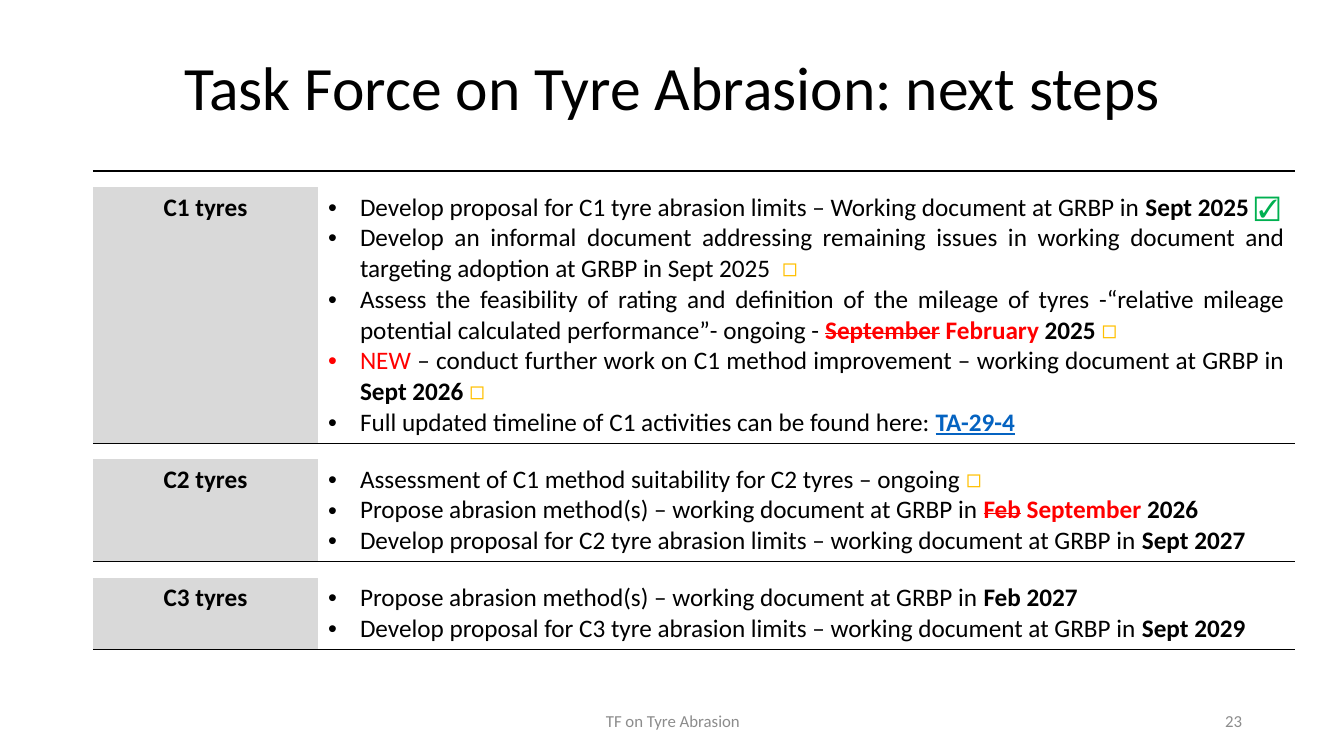
from dataclasses import dataclass
from lxml import etree
from pptx import Presentation
from pptx.dml.color import RGBColor
from pptx.enum.text import MSO_ANCHOR, PP_ALIGN
from pptx.oxml.ns import qn
from pptx.util import Pt

PX = 914400 / 100.8  # EMU in one px
NO_TABLE_STYLE = "{2D5ABB26-0587-4C30-8999-92F81FD0307C}"


@dataclass(frozen=True)
class Theme:
    font: str = "Calibri"
    title_size: int = 44
    body_size: int = 18
    footer_size: int = 12
    spacer_size: int = 3
    rule_width: int = 1
    black: str = "000000"
    footer_grey: str = "8C8C8C"
    label_fill: str = "D9D9D9"
    green: str = "00B050"
    amber: str = "FFC000"
    red: str = "FF0000"
    link_blue: str = "0563C1"

    def run_style(self, role):
        """Colour and bold for a role of text."""
        return {
            "plain": (self.black, False),
            "bold": (self.black, True),
            "done": (self.green, False),
            "open": (self.amber, False),
            "new": (self.red, False),
            "moved": (self.red, True),
            "struck": (self.red, True),
            "link": (self.link_blue, True),
            "footer": (self.footer_grey, False),
        }[role]


def emu(px):
    return round(px * PX)


class SlideBuilder:
    def __init__(self, slide, theme):
        self.slide = slide
        self.theme = theme

    def run(self, paragraph, text, role, size):
        run = paragraph.add_run()
        run.text = text
        color, bold = self.theme.run_style(role)
        font = run.font
        font.name, font.size, font.bold = self.theme.font, Pt(size), bold
        font.color.rgb = RGBColor.from_string(color)
        if role == "link":
            font.underline = True
        if role == "struck":
            run._r.get_or_add_rPr().set("strike", "sngStrike")

    def text(self, box, text, role, size, align, line_spacing=None):
        frame = self.slide.shapes.add_textbox(*map(emu, box)).text_frame
        frame.word_wrap = True
        frame.vertical_anchor = MSO_ANCHOR.MIDDLE
        paragraph = frame.paragraphs[0]
        paragraph.alignment = align
        paragraph.line_spacing = line_spacing
        self.run(paragraph, text, role, size)

    def rule(self, cell, side):
        """Draw a border on one side of a cell: T or B."""
        line = etree.Element(qn(f"a:ln{side}"), w=str(Pt(self.theme.rule_width)))
        fill = etree.SubElement(line, qn("a:solidFill"))
        etree.SubElement(fill, qn("a:srgbClr"), val=self.theme.black)
        cell._tc.get_or_add_tcPr().insert(0, line)

    def bullets(self, cell, items):
        frame = cell.text_frame
        for index, (align, runs) in enumerate(items):
            paragraph = frame.add_paragraph() if index else frame.paragraphs[0]
            paragraph.alignment = align
            props = paragraph._p.get_or_add_pPr()
            indent = emu(32)
            props.set("marL", str(indent))
            props.set("indent", str(-indent))
            etree.SubElement(props, qn("a:buFont"), typeface="Arial")
            etree.SubElement(props, qn("a:buChar"), char="•")
            for text, role in runs:
                self.run(paragraph, text, role, self.theme.body_size)

    def spacer(self, cell):
        """Keep an empty row thin."""
        paragraph = cell.text_frame.paragraphs[0]._p
        etree.SubElement(paragraph, qn("a:endParaRPr"), sz=str(self.theme.spacer_size * 100))

    def steps_table(self, left, top, widths, gap, groups):
        heights = [h for _, height, _ in groups for h in (gap, height)]
        table = self.slide.shapes.add_table(
            len(heights), len(widths), *map(emu, (left, top, sum(widths), sum(heights)))
        ).table
        table.first_row = table.horz_banding = False
        table._tbl.tblPr.find(qn("a:tableStyleId")).text = NO_TABLE_STYLE
        for column, width in zip(table.columns, widths):
            column.width = emu(width)
        for row, height in zip(table.rows, heights):
            row.height = emu(height)
        for cell in table.iter_cells():
            cell.fill.background()

        for index, (label, _, items) in enumerate(groups):
            for column in range(len(widths)):
                spacer_cell = table.cell(2 * index, column)
                self.spacer(spacer_cell)
                if index == 0:
                    self.rule(spacer_cell, "T")
                self.rule(table.cell(2 * index + 1, column), "B")
            label_cell = table.cell(2 * index + 1, 0)
            label_cell.fill.solid()
            label_cell.fill.fore_color.rgb = RGBColor.from_string(self.theme.label_fill)
            heading = label_cell.text_frame.paragraphs[0]
            heading.alignment = PP_ALIGN.CENTER
            self.run(heading, label, "bold", self.theme.body_size)
            self.bullets(table.cell(2 * index + 1, 1), items)


LEFT, JUSTIFY = PP_ALIGN.LEFT, PP_ALIGN.JUSTIFY
OPEN = ("◻", "open")

C1_STEPS = [
    (LEFT, [
        ("Develop proposal for C1 tyre abrasion limits – Working document at GRBP in ", "plain"),
        ("Sept 2025 ", "bold"), ("☑", "done")]),
    (JUSTIFY, [
        ("Develop an informal document addressing remaining issues in working document "
         "and targeting adoption at GRBP in Sept 2025  ", "plain"), OPEN]),
    (JUSTIFY, [
        ("Assess the feasibility of rating and definition of the mileage of tyres "
         "-“relative mileage potential calculated performance”- ongoing - ", "plain"),
        ("September", "struck"), (" ", "bold"), ("February", "moved"),
        (" 2025 ", "bold"), OPEN]),
    (JUSTIFY, [
        ("NEW", "new"),
        (" – conduct further work on C1 method improvement – working document at GRBP in ",
         "plain"),
        ("Sept 2026 ", "bold"), OPEN]),
    (JUSTIFY, [
        ("Full updated timeline of C1 activities can be found here: ", "plain"),
        ("TA-29-4", "link")]),
]
PROPOSE_METHOD = ("Propose abrasion method(s) – working document at GRBP in ", "plain")


def propose_limits(tyre_class, date):
    return (LEFT, [
        (f"Develop proposal for {tyre_class} tyre abrasion limits – "
         "working document at GRBP in ", "plain"),
        (date, "bold")])


C2_STEPS = [
    (LEFT, [("Assessment of C1 method suitability for C2 tyres – ongoing ", "plain"), OPEN]),
    (LEFT, [PROPOSE_METHOD, ("Feb", "struck"), (" ", "bold"), ("September", "moved"),
            (" 2026", "bold")]),
    propose_limits("C2", "Sept 2027"),
]
C3_STEPS = [
    (LEFT, [PROPOSE_METHOD, ("Feb 2027", "bold")]),
    propose_limits("C3", "Sept 2029"),
]


def main():
    deck = Presentation()
    deck.slide_width, deck.slide_height = emu(1344), emu(756)
    theme = Theme()
    builder = SlideBuilder(deck.slides.add_slide(deck.slide_layouts[6]), theme)

    # Steps for each tyre class
    builder.steps_table(93, 171, (225, 977), 16, [
        ("C1 tyres", 256, C1_STEPS),
        ("C2 tyres", 102, C2_STEPS),
        ("C3 tyres", 72, C3_STEPS),
    ])

    # Title
    builder.text((93, 40, 1159, 102), "Task Force on Tyre Abrasion: next steps",
                 "plain", theme.title_size, PP_ALIGN.CENTER, 0.9)

    # Footer
    builder.text((950, 701, 302, 40), "23", "footer", theme.footer_size, PP_ALIGN.RIGHT)
    builder.text((446, 701, 454, 40), "TF on Tyre Abrasion", "footer",
                 theme.footer_size, PP_ALIGN.CENTER)

    deck.save("out.pptx")


if __name__ == "__main__":
    main()
